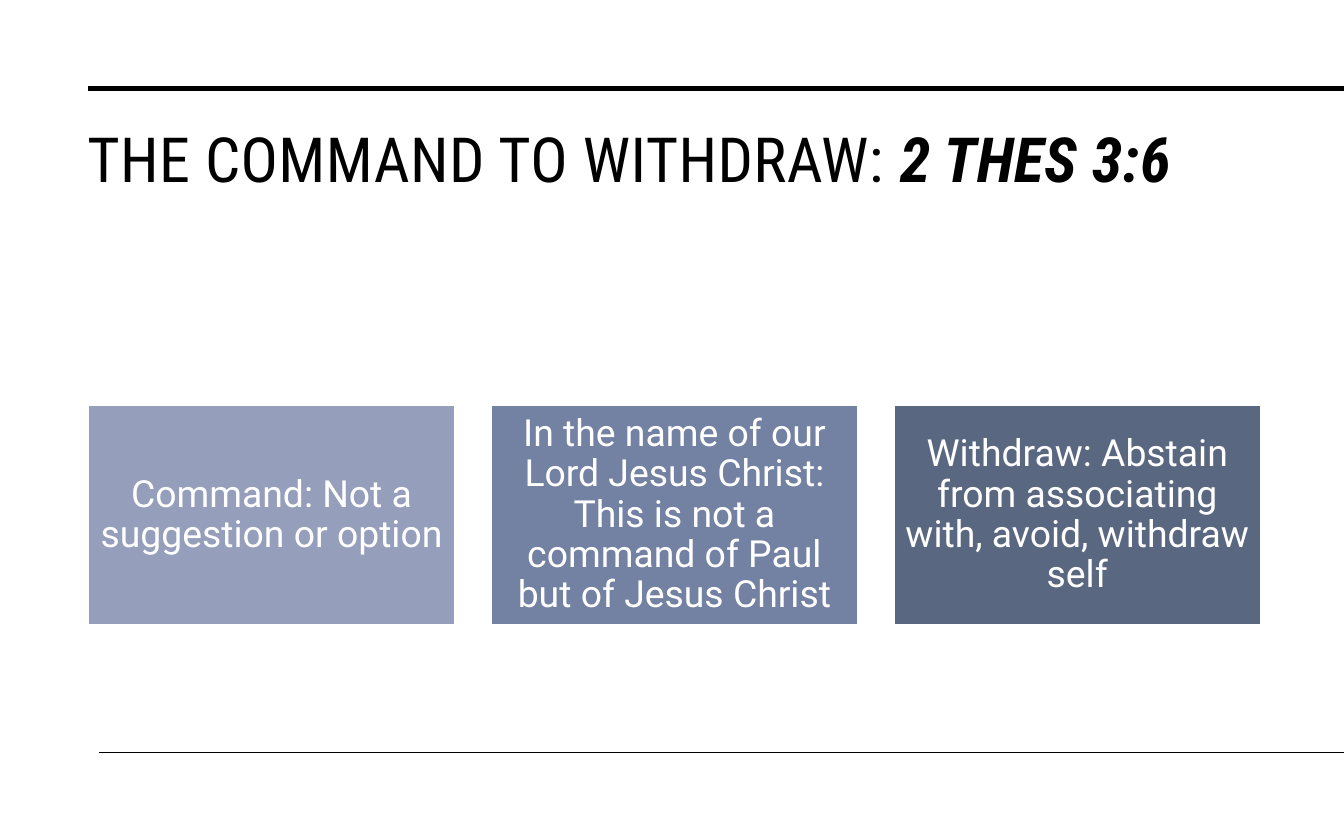
from pptx import Presentation
from pptx.dml.color import RGBColor
from pptx.enum import shapes, text
from pptx.oxml.ns import qn
from pptx.util import Inches, Pt
from lxml import etree

BLACK = RGBColor(0x00, 0x00, 0x00)
WHITE = RGBColor(0xFF, 0xFF, 0xFF)
LAVENDER = RGBColor(0x95, 0x9E, 0xBB)
STEEL = RGBColor(0x73, 0x81, 0xA2)
SLATE = RGBColor(0x59, 0x67, 0x81)

# Content
TITLE_RUNS = [("THE COMMAND TO WITHDRAW: ", False), ("2 THES 3:6", True)]
POINTS = [
    ("Command: Not a suggestion or option", LAVENDER),
    ("In the name of our Lord Jesus Christ: This is not a command of Paul "
     "but of Jesus Christ", STEEL),
    ("Withdraw: Abstain from associating with, avoid, withdraw self", SLATE),
]

# Layout, in inches
WIDTH, HEIGHT = 12, 7.5
RULES = [(0.79, 0.79, 3.5), (0.88, 6.72, 1)]  # left, y, weight in points
CARD_LEFT, CARD_TOP, CARD_WIDTH, CARD_HEIGHT = 0.79, 3.62, 3.27, 1.96
CARD_STEP = CARD_WIDTH * 1.1


def set_insets(frame, inset):
    frame.margin_left = frame.margin_right = Inches(inset)
    frame.margin_top = frame.margin_bottom = Inches(inset)


prs = Presentation()
prs.slide_width, prs.slide_height = Inches(WIDTH), Inches(HEIGHT)
slide = prs.slides.add_slide(prs.slide_layouts[5])

# Rules running to the right edge
for left, y, weight in RULES:
    rule = slide.shapes.add_connector(
        shapes.MSO_CONNECTOR.STRAIGHT,
        Inches(left), Inches(y), Inches(WIDTH), Inches(y))
    rule.line.color.rgb = BLACK
    rule.line.width = Pt(weight)
    etree.SubElement(rule._element.spPr, qn("a:effectLst"))

# Title
title = slide.shapes.title
title.left, title.top = Inches(0.68), Inches(0.97)
title.width, title.height = Inches(10.63), Inches(1.15)
frame = title.text_frame
frame.word_wrap = True
frame.auto_size = text.MSO_AUTO_SIZE.NONE
frame.vertical_anchor = text.MSO_ANCHOR.TOP
set_insets(frame, 0.1)
heading = frame.paragraphs[0]
heading.alignment = text.PP_ALIGN.LEFT
heading.font.name = "Roboto Condensed"
heading.font.size = Pt(40)
heading.font.color.rgb = BLACK
for words, emphasis in TITLE_RUNS:
    run = heading.add_run()
    run.text = words
    run.font.bold = run.font.italic = emphasis
    run.font._element.set("spc", "30")

# Three cards in a row
for i, (point, color) in enumerate(POINTS):
    card = slide.shapes.add_shape(
        shapes.MSO_SHAPE.RECTANGLE,
        Inches(CARD_LEFT + i * CARD_STEP), Inches(CARD_TOP),
        Inches(CARD_WIDTH), Inches(CARD_HEIGHT))
    card.shadow.inherit = False
    card.fill.solid()
    card.fill.fore_color.rgb = color
    card.line.color.rgb = WHITE
    card.line.width = Pt(1)
    frame = card.text_frame
    frame.word_wrap = True
    frame.vertical_anchor = text.MSO_ANCHOR.MIDDLE
    set_insets(frame, 0.1)
    body = frame.paragraphs[0]
    body.text = point
    body.alignment = text.PP_ALIGN.CENTER
    body.line_spacing = 0.9
    body.font.name = "Roboto"
    body.font.size = Pt(24)
    body.font.color.rgb = WHITE

prs.save("out.pptx")
